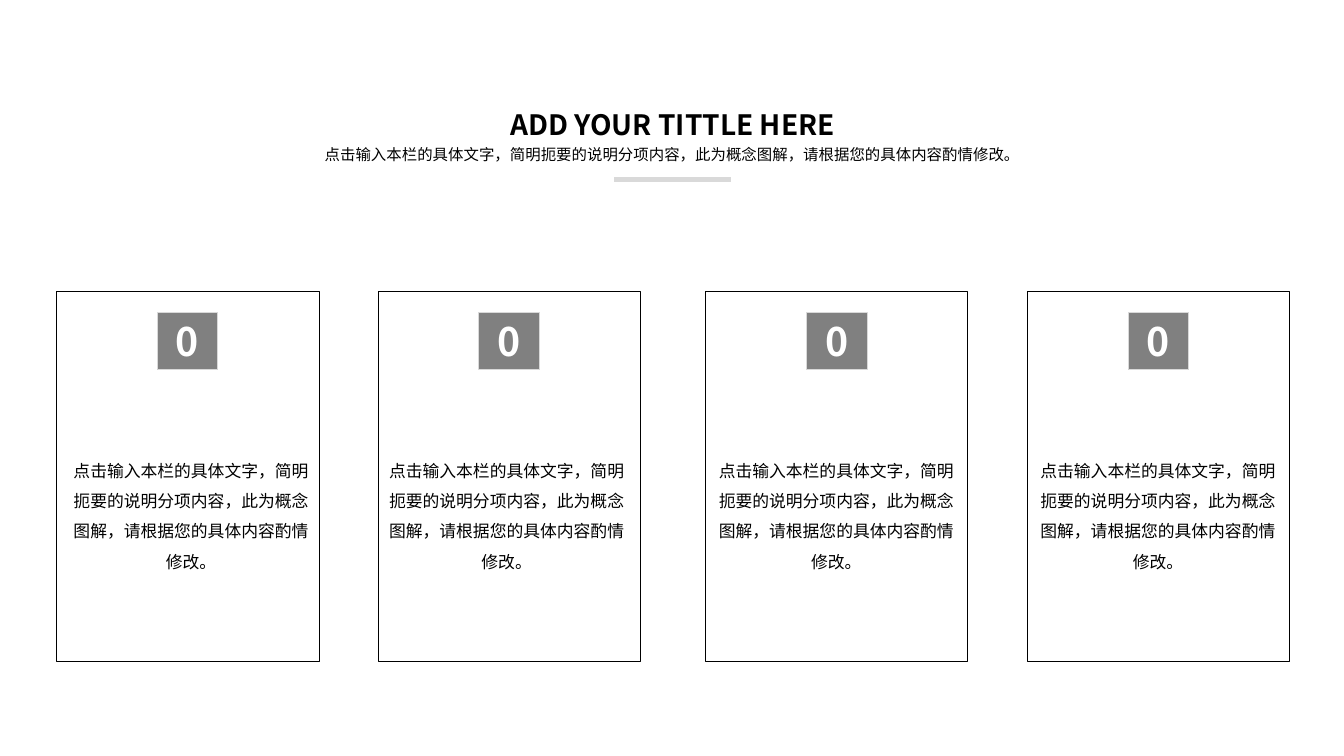
from pptx import Presentation
from pptx.dml.color import RGBColor
from pptx.enum.shapes import MSO_CONNECTOR, MSO_SHAPE
from pptx.enum.text import MSO_ANCHOR, MSO_AUTO_SIZE, PP_ALIGN
from pptx.util import Inches, Pt
from lxml.etree import SubElement
from pptx.oxml.ns import qn

COLORS = {"text": "000000", "badge": "808080", "rule": "D9D9D9", "white": "FFFFFF"}
BODY = "点击输入本栏的具体文字，简明扼要的说明分项内容，此为概念图解，请根据您的具体内容酌情修改。"
CARDS = [(0.56, 2.61, 0.62), (3.75, 2.6, 3.75), (7, 2.6, 7.02), (10.19, 2.6, 10.21)]


class SlideBuilder:
    """Draws styled elements on one slide."""

    font = "Noto Sans CJK SC"

    def __init__(self, slide):
        self.slide = slide

    def color(self, name):
        return RGBColor.from_string(COLORS[name])

    def add_text(self, paragraph, text, size, color="text", bold=False):
        paragraph.alignment = PP_ALIGN.CENTER
        run = paragraph.add_run()
        run.text = text
        run.font.size = Pt(size)
        run.font.bold = bold
        run.font.name = self.font
        run.font.color.rgb = self.color(color)
        SubElement(run.font._element, qn("a:ea")).set("typeface", self.font)

    def rule(self, left, right, top):
        line = self.slide.shapes.add_connector(
            MSO_CONNECTOR.STRAIGHT, Inches(left), Inches(top), Inches(right), Inches(top))
        line.line.color.rgb = self.color("rule")
        line.line.width = Pt(3)
        SubElement(line._element.spPr, qn("a:effectLst"))

    def text_box(self, left, top, width, height, lines, spacing, inset=None):
        box = self.slide.shapes.add_textbox(
            Inches(left), Inches(top), Inches(width), Inches(height))
        frame = box.text_frame
        frame.word_wrap = True
        frame.auto_size = MSO_AUTO_SIZE.SHAPE_TO_FIT_TEXT
        if inset is not None:
            frame.margin_left = frame.margin_right = Inches(inset)
            frame.margin_top = frame.margin_bottom = Inches(inset)
        for index, (text, size, bold) in enumerate(lines):
            paragraph = frame.add_paragraph() if index else frame.paragraphs[0]
            paragraph.line_spacing = spacing
            self.add_text(paragraph, text, size, bold=bold)

    def rectangle(self, left, top, width, height, line, fill=None):
        shape = self.slide.shapes.add_shape(
            MSO_SHAPE.RECTANGLE, Inches(left), Inches(top), Inches(width), Inches(height))
        shape.shadow.inherit = False
        if fill:
            shape.fill.solid()
            shape.fill.fore_color.rgb = self.color(fill)
        else:
            shape.fill.background()
        shape.line.color.rgb = self.color(line)
        shape.line.width = Pt(0.75)
        return shape

    def badge(self, left, top, text):
        frame = self.rectangle(left, top, 0.6, 0.57, "rule", "badge").text_frame
        frame.word_wrap = False
        frame.vertical_anchor = MSO_ANCHOR.MIDDLE
        frame.paragraphs[0].space_before = Pt(6)
        self.add_text(frame.paragraphs[0], text, 28, "white", True)


def main():
    presentation = Presentation()
    presentation.slide_width = Inches(13.33)
    presentation.slide_height = Inches(7.5)
    builder = SlideBuilder(presentation.slides.add_slide(presentation.slide_layouts[6]))

    builder.rule(6.09, 7.25, 1.78)
    heading = [("ADD YOUR TITTLE HERE", 20, True), (BODY, 11, False)]
    builder.text_box(3.06, 1, 7.22, 0.6, heading, 1.2, inset=0)
    for card_left, card_width, text_left in CARDS:
        builder.badge(card_left + 1, 3.1, "0")
        builder.rectangle(card_left, 2.89, card_width, 3.67, "text")
        builder.text_box(text_left, 4.42, 2.55, 1.27, [(BODY, 12, False)], 1.5)

    presentation.save("out.pptx")


if __name__ == "__main__":
    main()
